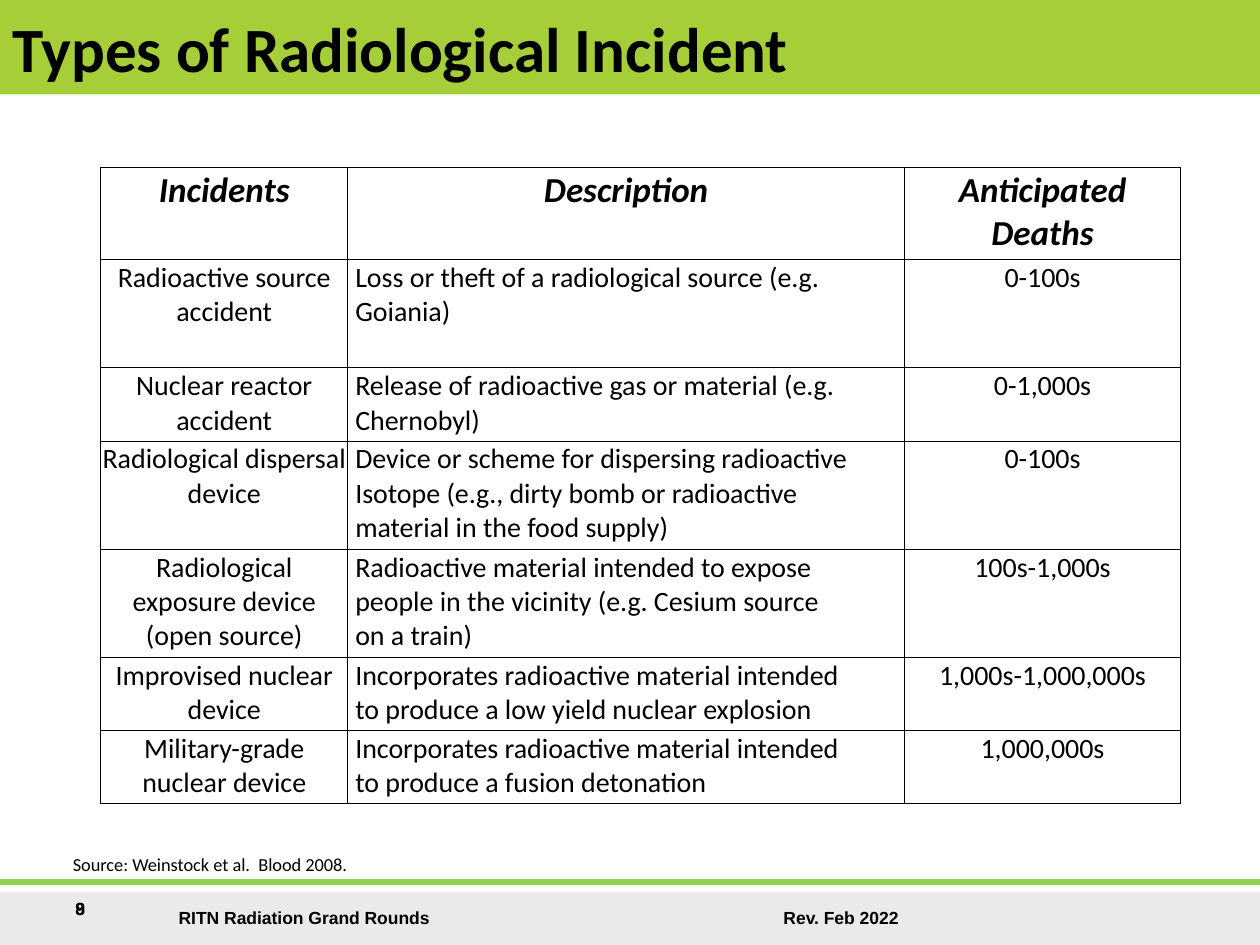
from dataclasses import dataclass

from lxml import etree
from pptx import Presentation
from pptx import util as u
from pptx.dml.color import RGBColor
from pptx.enum import shapes, text
from pptx.oxml import ns

# The slide is a grid of 100 columns by 75 rows
CELL = u.Inches(0.1)
COLS, ROWS = 100, 75
BLACK, LIME, GREEN, GRAY = "000000", "A6CE39", "92D050", "EAEAEA"


@dataclass
class Box:
    x: float
    y: float
    w: float
    h: float

    def emu(self) -> list[int]:
        return [grid(n) for n in (self.x, self.y, self.w, self.h)]


@dataclass
class Font:
    size: float
    name: str = "Calibri"
    bold: bool = False
    slant: bool = False


@dataclass
class Row:
    high: float
    name: str
    about: str
    deaths: str


def grid(n: float) -> int:
    return round(n * CELL)


def color(code: str) -> RGBColor:
    return RGBColor.from_string(code)


def add(parent, tag: str, **attrs: str):
    return etree.SubElement(parent, ns.qn(tag), attrs)


def style(par, font: Font) -> None:
    par.font.size = u.Pt(font.size)
    par.font.name = font.name
    par.font.bold = font.bold
    par.font.italic = font.slant
    par.font.color.rgb = color(BLACK)


def label(slide, box: Box, words: str, font: Font, wrap: bool = True, tab: float = 0):
    frame = slide.shapes.add_textbox(*box.emu()).text_frame
    frame.word_wrap = wrap
    par = frame.paragraphs[0]
    par.text = words
    if tab:
        stops = add(par._p.get_or_add_pPr(), "a:tabLst")
        add(stops, "a:tab", pos=str(grid(tab)), algn="l")
    style(par, font)
    return par


def band(slide, box: Box, fill: str):
    bar = slide.shapes.add_shape(shapes.MSO_SHAPE.RECTANGLE, *box.emu())
    bar.shadow.inherit = False
    bar.fill.solid()
    bar.fill.fore_color.rgb = color(fill)
    bar.line.fill.background()
    return bar


def rule(slide, y: float, code: str, width: float) -> None:
    line = slide.shapes.add_connector(
        shapes.MSO_CONNECTOR.STRAIGHT, 0, grid(y), grid(COLS), grid(y))
    line.line.color.rgb = color(code)
    line.line.width = u.Pt(width)
    add(line._element.spPr, "a:effectLst")


def border(cell) -> None:
    props = cell._tc.get_or_add_tcPr()
    for side in "LRTB":
        line = add(props, f"a:ln{side}", w=str(u.Pt(0.5)))
        add(add(line, "a:solidFill"), "a:srgbClr", val=BLACK)


def write(cell, words: str, font: Font, align, left: float) -> None:
    border(cell)
    cell.fill.background()
    cell.margin_left = grid(left)
    cell.margin_right = cell.margin_top = grid(0.1)
    cell.margin_bottom = 0
    cell.text = words
    for par in cell.text_frame.paragraphs:
        par.alignment = align
        style(par, font)


def chart(slide, box: Box, wide: list[float], rows: list[Row]) -> None:
    table = slide.shapes.add_table(len(rows), len(wide), *box.emu()).table
    table.first_row = table.horz_banding = False
    for col, width in zip(table.columns, wide):
        col.width = grid(width)
    for r, row in enumerate(rows):
        table.rows[r].height = grid(row.high)
        font = Font(16) if r else Font(20, bold=True, slant=True)
        for c, words in enumerate((row.name, row.about, row.deaths)):
            plain = r > 0 and c == 1
            align = text.PP_ALIGN.LEFT if plain else text.PP_ALIGN.CENTER
            write(table.cell(r, c), words, font, align, 0.6 if plain else 0.1)


INCIDENTS = [
    Row(7.3, "Incidents", "Description", "Anticipated\nDeaths"),
    Row(8.6, "Radioactive source accident",
        "Loss or theft of a radiological source (e.g.\nGoiania)", "0-100s"),
    Row(5.8, "Nuclear reactor accident",
        "Release of radioactive gas or material (e.g.\nChernobyl)", "0-1,000s"),
    Row(8.6, "Radiological dispersal device",
        "Device or scheme for dispersing radioactive\n"
        "Isotope (e.g., dirty bomb or radioactive\n"
        "material in the food supply)", "0-100s"),
    Row(8.6, "Radiological exposure device (open source)",
        "Radioactive material intended to expose\n"
        "people in the vicinity (e.g. Cesium source\non a train)", "100s-1,000s"),
    Row(5.8, "Improvised nuclear device",
        "Incorporates radioactive material intended\n"
        "to produce a low yield nuclear explosion", "1,000s-1,000,000s"),
    Row(5.8, "Military-grade nuclear device",
        "Incorporates radioactive material intended\n"
        "to produce a fusion detonation", "1,000,000s"),
]


def main() -> None:
    deck = Presentation()
    deck.slide_width, deck.slide_height = grid(COLS), grid(ROWS)
    slide = deck.slides.add_slide(deck.slide_layouts[6])
    small = Font(10, "Arial", bold=True)

    # Footer band, rule and page numbers
    band(slide, Box(0, 70.8, COLS, 4.2), GRAY)
    label(slide, Box(13.2, 71.5, 59.3, 2.7),
          "RITN Radiation Grand Rounds\tRev. Feb 2022", small, tab=48)
    rule(slide, 70, GREEN, 3)
    for page in "98":
        label(slide, Box(5, 70.8, 6.7, 4.2), page, small)

    # Source line
    source = label(slide, Box(4.8, 67.4, 24.3, 2.6),
                   "Source: Weinstock et al.  Blood 2008.", Font(10.5), wrap=False)
    source.line_spacing = 0.9

    # Incident table
    chart(slide, Box(8, 13.3, 85.7, 50.4), [19.6, 44.2, 21.9], INCIDENTS)

    # Title band
    head = band(slide, Box(0, 0, COLS, 7.5), LIME).text_frame
    head.vertical_anchor = text.MSO_ANCHOR.MIDDLE
    title = head.paragraphs[0]
    title.text = "Types of Radiological Incident"
    title.alignment = text.PP_ALIGN.LEFT
    style(title, Font(36, bold=True))

    deck.save("out.pptx")


if __name__ == "__main__":
    main()
